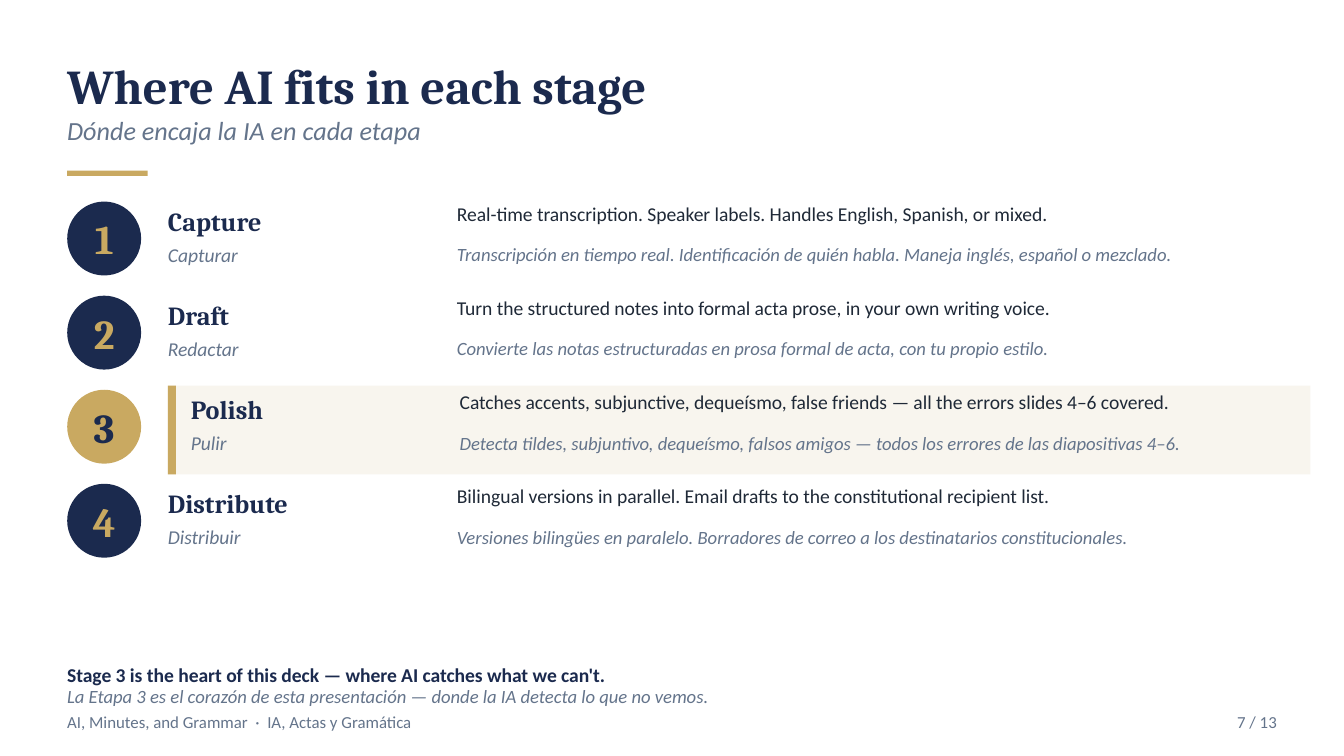
from pptx import Presentation
from pptx.dml.color import RGBColor
from pptx.enum.shapes import MSO_SHAPE
from pptx.enum.text import MSO_ANCHOR, PP_ALIGN
from pptx.util import Inches, Pt

RECT, OVAL = MSO_SHAPE.RECTANGLE, MSO_SHAPE.OVAL
TOP, MID, LOW = MSO_ANCHOR.TOP, MSO_ANCHOR.MIDDLE, MSO_ANCHOR.BOTTOM
START, MIDDLE, END = PP_ALIGN.LEFT, PP_ALIGN.CENTER, PP_ALIGN.RIGHT
NAVY, GOLD, GREY, INK, CREAM = "1B2A4E", "C9A961", "64748B", "1F2937", "F8F5EE"
HEAD, BODY = "Cambria", "Calibri"

# Grid in inches: three columns, and rows at an equal pitch
LEFT, NAME, NOTE = 0.5, 1.25, 3.4
WIDE, EDGE = 9, 9.7
FIRST, PITCH, DISC = 1.5, 0.7, 0.55
SECOND = 0.31

deck = Presentation()
deck.slide_width, deck.slide_height = Inches(10), Inches(5.625)
slide = deck.slides.add_slide(deck.slide_layouts[5])


def block(kind, x, y, w, h, color):
    shape = slide.shapes.add_shape(kind, *map(Inches, (x, y, w, h)))
    shape.shadow.inherit = False
    shape.fill.solid()
    shape.fill.fore_color.rgb = RGBColor.from_string(color)
    shape.line.fill.background()
    return shape


def write(text, at=None, shape=None, size=10, font=BODY, color=GREY,
          bold=False, italic=False, align=START, anchor=TOP, wrap=True):
    """Fill the given shape with text, or a new text box if there is none."""
    if shape is None:
        shape = slide.shapes.add_textbox(0, 0, 0, 0)
    if at:
        shape.left, shape.top, shape.width, shape.height = map(Inches, at)
    frame = shape.text_frame
    frame.margin_left = frame.margin_right = 0
    frame.margin_top = frame.margin_bottom = 0
    frame.word_wrap, frame.vertical_anchor = wrap, anchor
    line = frame.paragraphs[0]
    line.alignment = align
    run = line.add_run()
    run.text = text
    face = run.font
    face.size, face.name, face.bold, face.italic = Pt(size), font, bold, italic
    face.color.rgb = RGBColor.from_string(color)


# Heading
write("Where AI fits in each stage", (LEFT, 0.35, WIDE, 0.5),
      shape=slide.shapes.title, size=26, font=HEAD, color=NAVY, bold=True,
      anchor=LOW)
write("Dónde encaja la IA en cada etapa", (LEFT, 0.85, WIDE, 0.35),
      size=14, italic=True)
block(RECT, LEFT, 1.27, 0.6, 0.04, GOLD)

# Stages: name and note, each in English and Spanish
KEY = 3
stages = [
    ("Capture", "Capturar",
     "Real-time transcription. Speaker labels. Handles English, Spanish, or mixed.",
     "Transcripción en tiempo real. Identificación de quién habla. "
     "Maneja inglés, español o mezclado."),
    ("Draft", "Redactar",
     "Turn the structured notes into formal acta prose, in your own writing voice.",
     "Convierte las notas estructuradas en prosa formal de acta, con tu propio estilo."),
    ("Polish", "Pulir",
     "Catches accents, subjunctive, dequeísmo, false friends — "
     "all the errors slides 4–6 covered.",
     "Detecta tildes, subjuntivo, dequeísmo, falsos amigos — "
     "todos los errores de las diapositivas 4–6."),
    ("Distribute", "Distribuir",
     "Bilingual versions in parallel. Email drafts to the constitutional recipient list.",
     "Versiones bilingües en paralelo. "
     "Borradores de correo a los destinatarios constitucionales."),
]
for step, (name, nombre, note, nota) in enumerate(stages, 1):
    y = FIRST + (step - 1) * PITCH
    name_x, name_w, note_x = NAME, 2, NOTE
    back, front = NAVY, GOLD
    if step == KEY:
        name_x, name_w, note_x = NAME + 0.17, 1.85, NOTE + 0.02
        back, front = GOLD, NAVY
        block(RECT, NAME, y - 0.03, 8.5, 0.66, CREAM)
        block(RECT, NAME, y - 0.03, 0.06, 0.66, GOLD)
    write(str(step), shape=block(OVAL, LEFT, y, DISC, DISC, back), size=22,
          font=HEAD, color=front, bold=True, align=MIDDLE, anchor=MID,
          wrap=False)
    write(name, (name_x, y + 0.03, name_w, 0.28), size=14, font=HEAD,
          color=NAVY, bold=True)
    write(nombre, (name_x, y + SECOND, name_w, 0.24), size=10.5, italic=True)
    write(note, (note_x, y, EDGE - note_x, 0.3), size=10.5, color=INK)
    write(nota, (note_x, y + SECOND, EDGE - note_x, 0.3), italic=True)

# Closing line and footer
write("Stage 3 is the heart of this deck — where AI catches what we can't.",
      (LEFT, 4.93, WIDE, 0.18), size=10.5, color=NAVY, bold=True, anchor=MID)
write("La Etapa 3 es el corazón de esta presentación — "
      "donde la IA detecta lo que no vemos.",
      (LEFT, 5.09, WIDE, 0.18), italic=True, anchor=MID)
write("AI, Minutes, and Grammar  ·  IA, Actas y Gramática",
      (LEFT, 5.22, 7.5, 0.3), size=9, anchor=MID)
write("7 / 13", (8, 5.22, 1.5, 0.3), size=9, align=END, anchor=MID)

deck.save("out.pptx")
